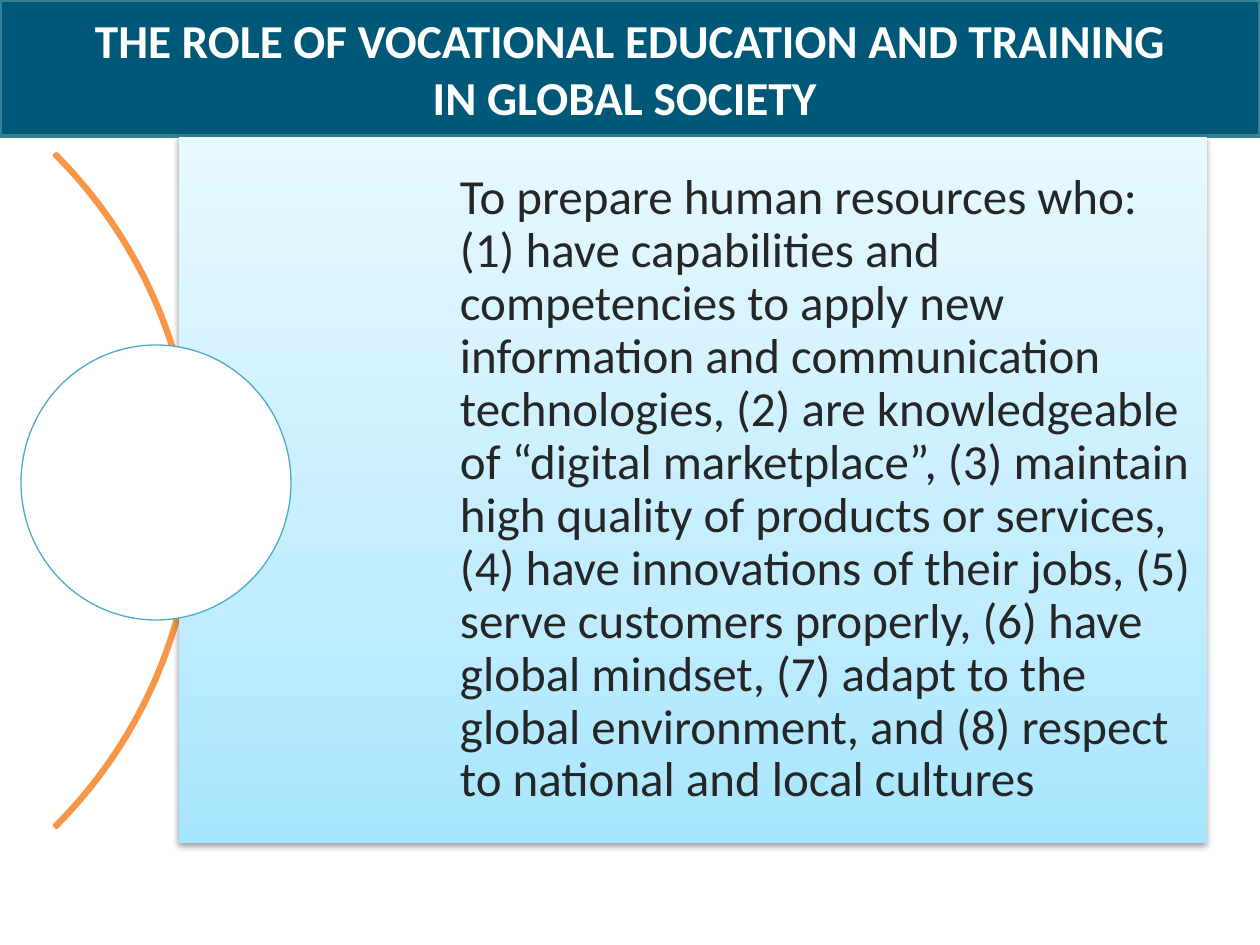
import copy

import lxml.etree
import pptx
import pptx.dml.color
import pptx.enum.shapes
import pptx.enum.text
import pptx.oxml
import pptx.oxml.ns
import pptx.util

# Content: positions and sizes are in px, 126 to the inch
TITLE = "THE ROLE OF VOCATIONAL EDUCATION AND TRAINING\vIN GLOBAL SOCIETY "
BODY = (
    "To prepare human resources who: (1) have capabilities and competencies to apply new "
    "information and communication technologies, (2) are knowledgeable of “digital marketplace”, "
    "(3) maintain high quality of products or services, (4) have innovations of their jobs, "
    "(5) serve customers properly, (6) have global mindset, (7) adapt to the global environment, "
    "and (8) respect to national and local cultures"
)
TITLE_BOX = (0, 0, 1260, 136)
ARC_BOX = (-757, 14, 953, 953)
PANEL_BOX = (179, 137, 1028, 706)
CIRCLE_BOX = (21, 345, 270, 275)
PANEL_STOPS = [(0, "A7E6FF"), (0.35, "C1EDFF"), (1, "E7F8FF")]
SHADOW_XML = (
    '<a:effectLst xmlns:a="http://schemas.openxmlformats.org/drawingml/2006/main">'
    '<a:outerShdw blurRad="40000" dist="20000" dir="5400000" rotWithShape="0">'
    '<a:srgbClr val="000000"><a:alpha val="38000"/></a:srgbClr>'
    "</a:outerShdw></a:effectLst>"
)
SHAPES = pptx.enum.shapes.MSO_SHAPE


def px(length):
    return pptx.util.Emu(round(length * 914400 / 126))


def rgb(value):
    return pptx.dml.color.RGBColor.from_string(value)


def add_shape(kind, box, fill=None, line=None, line_width=0):
    shape = slide.shapes.add_shape(kind, *map(px, box))
    shape.shadow.inherit = False
    if fill:
        shape.fill.solid()
        shape.fill.fore_color.rgb = rgb(fill)
    else:
        shape.fill.background()
    if line:
        shape.line.color.rgb = rgb(line)
        shape.line.width = pptx.util.Pt(line_width)
    else:
        shape.line.fill.background()
    return shape


def set_text(shape, text, size, color, alignment, bold=False):
    frame = shape.text_frame
    frame.word_wrap = True
    frame.vertical_anchor = pptx.enum.text.MSO_ANCHOR.MIDDLE
    paragraph = frame.paragraphs[0]
    paragraph.text = text
    paragraph.alignment = alignment
    paragraph.font.name = "Calibri"
    paragraph.font.size = pptx.util.Pt(size)
    paragraph.font.bold = bold
    paragraph.font.color.rgb = rgb(color)
    return frame


def set_gradient(fill, stops):
    fill.gradient()
    fill.gradient_angle = 90
    first = fill.gradient_stops[0]
    stop_list = fill._xPr.find(".//" + pptx.oxml.ns.qn("a:gsLst"))
    stop_list.append(copy.deepcopy(stop_list[0]))
    for stop, (position, color) in zip(fill.gradient_stops, stops):
        stop.position = position
        stop.color.rgb = rgb(color)


presentation = pptx.Presentation()
presentation.slide_width, presentation.slide_height = px(1260), px(945)
slide = presentation.slides.add_slide(presentation.slide_layouts[6])

# Title band
title = add_shape(SHAPES.RECTANGLE, TITLE_BOX, "005878", "377F92", 2)
set_text(title, TITLE, 27, "FFFFFF", pptx.enum.text.PP_ALIGN.CENTER, bold=True)

# Thin arc behind the panel
arc = add_shape(SHAPES.BLOCK_ARC, ARC_BOX, line="F79646", line_width=2)
for index, value in enumerate((189, 27, 0.003)):
    arc.adjustments[index] = value

# Gradient panel with a soft shadow
panel = add_shape(SHAPES.RECTANGLE, PANEL_BOX)
set_gradient(panel.fill, PANEL_STOPS)
properties = panel._element.spPr
properties.replace(
    properties.find(pptx.oxml.ns.qn("a:effectLst")), pptx.oxml.parse_xml(SHADOW_XML)
)

# Panel text, indented past the circle
body = slide.shapes.add_textbox(*map(px, PANEL_BOX))
frame = set_text(body, BODY, 28, "262626", pptx.enum.text.PP_ALIGN.LEFT)
frame.margin_left = px(281)
frame.margin_top = frame.margin_right = frame.margin_bottom = px(10)
frame.paragraphs[0].line_spacing = 0.9

# Circle
add_shape(SHAPES.OVAL, CIRCLE_BOX, "FFFFFF", "4BACC6", 0.75)

presentation.save("out.pptx")
